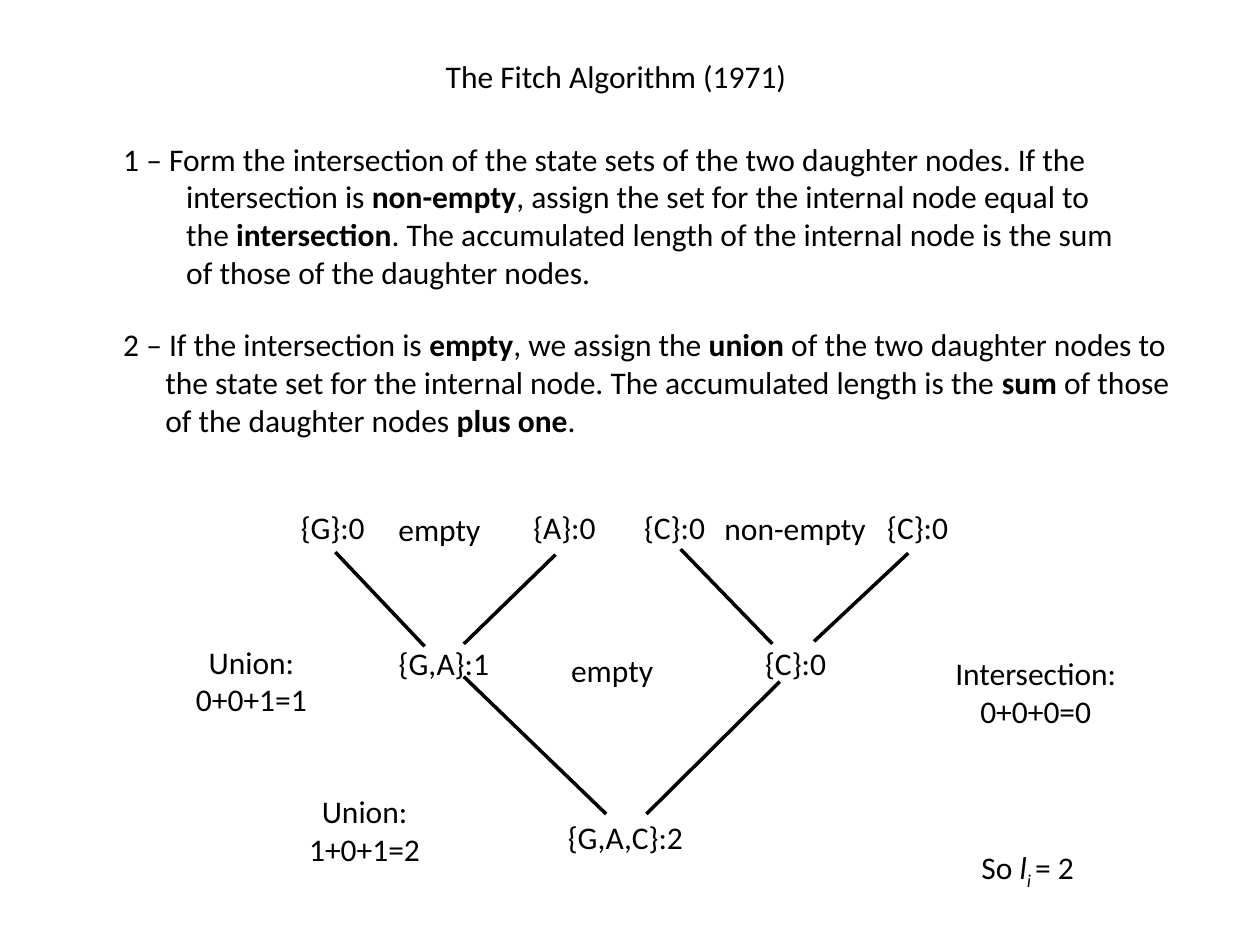
from dataclasses import dataclass

from lxml.etree import SubElement
from pptx import Presentation
from pptx.dml.color import RGBColor
from pptx.enum.shapes import MSO_CONNECTOR as Conn
from pptx.enum.text import MSO_AUTO_SIZE as Fit, PP_ALIGN as Align
from pptx.oxml.ns import qn
from pptx.util import Cm, Pt


@dataclass(frozen=True)
class Theme:
    font: str = "Calibri"
    size: int = 18
    ink: RGBColor = RGBColor(0, 0, 0)
    line: float = 2
    line_height: float = 0.77  # cm
    padding: float = 0.25      # cm, top and bottom inset together


T = Theme()

# Content: a run is plain text or (text, style); positions are in cm
TITLE = "The Fitch Algorithm (1971)"
RULE_1 = [
    "1 – Form the intersection of the state sets of the two daughter nodes. If the\n"
    "intersection is ", ("non-empty", "b"),
    ", assign the set for the internal node equal to\nthe ", ("intersection", "b"),
    ". The accumulated length of the internal node is the sum\n"
    "of those of the daughter nodes.",
]
RULE_2 = [
    "2 – If the intersection is ", ("empty", "b"), ", we assign the ", ("union", "b"),
    " of the two daughter nodes to\n"
    "the state set for the internal node. The accumulated length is the ",
    ("sum ", "b"), "of those\nof the daughter nodes ", ("plus one", "b"), ".",
]
RESULT = ["So", (" l", "i"), ("i ", "sub"), "= 2"]

LEAF_Y, INNER_Y, ROOT_Y = 10.11, 12.85, 16.36
NODES = [  # text, centre x, top, width
    ("{G}:0", 6.71, LEAF_Y, 1.83),
    ("{A}:0", 11.38, LEAF_Y, 1.78),
    ("{C}:0", 13.6, LEAF_Y, 1.75),
    ("{C}:0", 18.5, LEAF_Y, 1.75),
    ("{G,A}:1", 8.95, INNER_Y, 2.36),
    ("{C}:0", 16.04, INNER_Y, 1.75),
    ("{G,A,C}:2", 12.61, ROOT_Y, 2.87),
]
NOTES = [
    ("empty", 8.86, 10.16, 2.18),
    ("non-empty", 16.03, 10.13, 3.4),
    ("empty", 12.34, 13, 2.18),
    ("Union:\n0+0+1=1", 5.07, 12.83, 2.77),
    ("Intersection:\n0+0+0=0", 20.88, 13.06, 3.81),
    ("Union:\n1+0+1=2", 7.35, 15.85, 2.77),
]
BRANCHES = [  # daughter end, parent end
    ((6.76, 11.13), (8.56, 13.03)),
    ((11.2, 11.18), (9.35, 12.98)),
    ((13.72, 11.07), (15.57, 12.98)),
    ((18.31, 11.15), (16.41, 12.93)),
    ((9.35, 13.64), (12.22, 16.41)),
    ((15.72, 13.74), (13.03, 16.41)),
]

prs = Presentation()
prs.slide_width, prs.slide_height = Cm(25.4), Cm(19.05)
s = prs.slides.add_slide(prs.slide_layouts[6])


def add_text(runs, x, top, width, align=Align.CENTER, hang=0):
    """Add a text box centred on x; hang is the indent of later lines."""
    runs = [(r, "") if isinstance(r, str) else r for r in ([runs] if isinstance(runs, str) else runs)]
    lines = 1 + sum(text.count("\n") for text, _ in runs)
    height = lines * T.line_height + T.padding
    sp = s.shapes.add_textbox(Cm(x - width / 2), Cm(top), Cm(width), Cm(height))
    tf = sp.text_frame
    tf.word_wrap, tf.auto_size = False, Fit.SHAPE_TO_FIT_TEXT
    p = tf.paragraphs[0]
    p.alignment = align
    p.font.size, p.font.name = Pt(T.size), T.font
    if hang:
        pPr = p._p.get_or_add_pPr()
        pPr.set("marL", str(Cm(hang)))
        pPr.set("indent", str(-Cm(hang)))
    for text, style in runs:
        for i, part in enumerate(text.split("\n")):
            if i:
                p.add_line_break()
            r = p.add_run()
            r.text = part
            f = r.font
            f.name, f.size, f.color.rgb = T.font, Pt(T.size), T.ink
            f.bold, f.italic = style == "b", style in ("i", "sub")
            if style == "sub":
                r._r.get_or_add_rPr().set("baseline", "-25000")


def add_branch(start, end):
    line = s.shapes.add_connector(Conn.STRAIGHT, *(Cm(v) for v in start + end))
    line.line.color.rgb, line.line.width = T.ink, Pt(T.line)
    SubElement(line._element.spPr, qn("a:effectLst"))


# Title, rules and result
add_text(TITLE, 12.47, 1.02, 7.47, align=Align.LEFT)
add_text(RULE_1, 12.6, 2.69, 20.73, align=Align.LEFT, hang=1.27)
add_text(RULE_2, 13.18, 6.43, 21.89, align=Align.LEFT, hang=0.85)
add_text(RESULT, 20.79, 16.97, 2.51, align=Align.LEFT)

# Tree
for branch in BRANCHES:
    add_branch(*branch)
for label in NODES + NOTES:
    add_text(*label)

prs.save("out.pptx")
